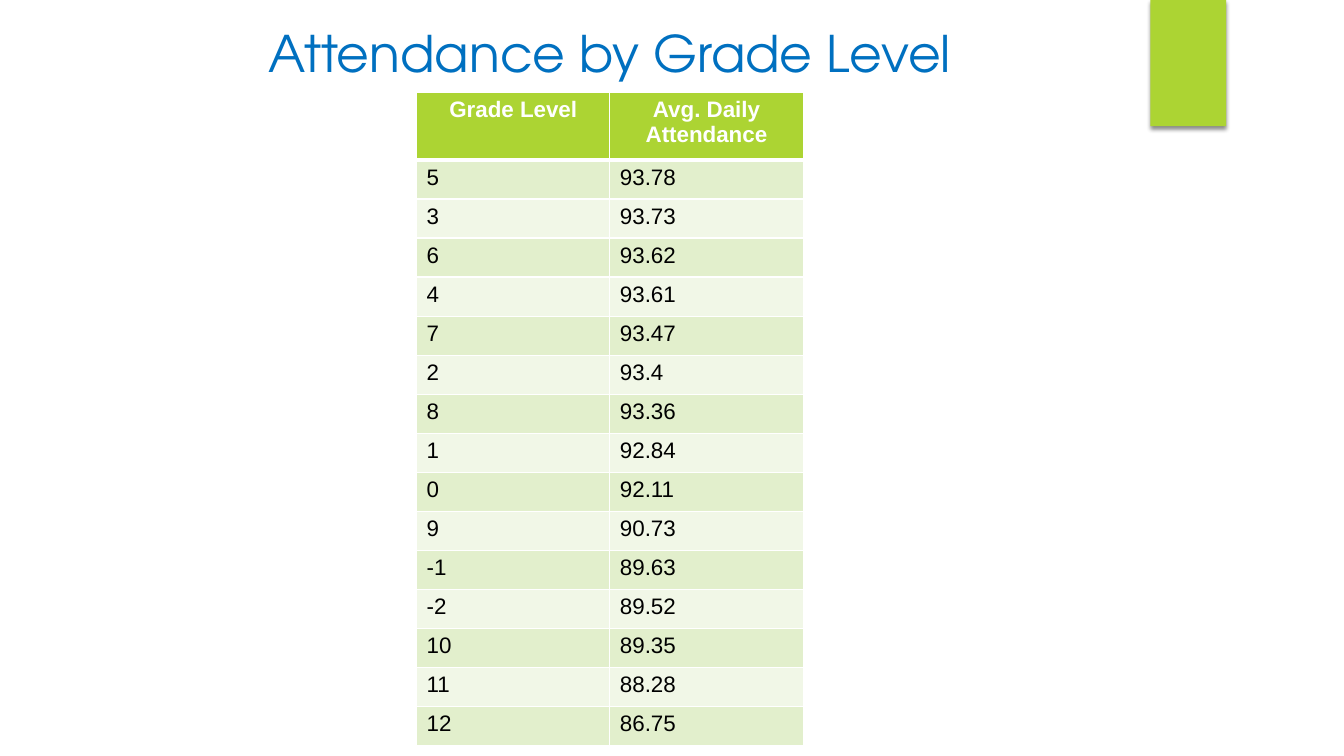
from dataclasses import dataclass

from lxml import etree
from pptx import Presentation
from pptx import util as u
from pptx.dml.color import RGBColor
from pptx.enum import shapes, text
from pptx.oxml import ns


@dataclass(frozen=True)
class Theme:
    lime: str = "ACD433"
    band: str = "E2EFCC"
    pale: str = "F1F7E7"
    blue: str = "0070C0"
    white: str = "FFFFFF"
    black: str = "000000"
    head: str = "TeX Gyre Adventor"
    body: str = "Arial"
    big: int = 36
    small: int = 16


THEME = Theme()
HEADS = ("Grade Level", "Avg. Daily Attendance")
RATES = (
    ("5", "93.78"), ("3", "93.73"), ("6", "93.62"), ("4", "93.61"),
    ("7", "93.47"), ("2", "93.4"), ("8", "93.36"), ("1", "92.84"),
    ("0", "92.11"), ("9", "90.73"), ("-1", "89.63"), ("-2", "89.52"),
    ("10", "89.35"), ("11", "88.28"), ("12", "86.75"),
)


def paint(fill, color):
    fill.solid()
    fill.fore_color.rgb = RGBColor.from_string(color)


def child(node, tag, **attrs):
    return etree.SubElement(node, ns.qn(tag), attrs)


def write(frame, words, face, size, color, bold=False, center=False):
    para = frame.paragraphs[0]
    para.alignment = text.PP_ALIGN.CENTER if center else text.PP_ALIGN.LEFT
    run = para.add_run()
    run.text = words
    run.font.name = face
    run.font.size = u.Pt(size)
    run.font.bold = bold
    run.font.color.rgb = RGBColor.from_string(color)


def add_tab(slide, box):
    tab = slide.shapes.add_shape(shapes.MSO_SHAPE.RECTANGLE, *map(u.Cm, box))
    paint(tab.fill, THEME.lime)
    tab.line.fill.background()
    tab.shadow.inherit = False
    glow = child(tab.shadow._element.find(ns.qn("a:effectLst")),
                 "a:outerShdw", blurRad=str(u.Pt(3)), dist=str(u.Pt(2)),
                 dir="5400000", rotWithShape="0")
    tint = child(glow, "a:srgbClr", val=THEME.black)
    child(tint, "a:alpha", val="45000")


def add_title(slide, box):
    frame = slide.shapes.add_textbox(*map(u.Cm, box)).text_frame
    frame.word_wrap = True
    frame.vertical_anchor = text.MSO_ANCHOR.MIDDLE
    write(frame, "Attendance by Grade Level", THEME.head, THEME.big,
          THEME.blue, center=True)


def edge(cell, base):
    props = cell._tc.get_or_add_tcPr()
    for spot, side in enumerate(("L", "R", "T", "B")):
        width = base if side == "B" else 1
        line = etree.Element(ns.qn(f"a:ln{side}"), w=str(u.Pt(width)))
        child(child(line, "a:solidFill"), "a:srgbClr", val=THEME.white)
        props.insert(spot, line)


def add_grid(slide, box, top):
    left, up, width, height = box
    rows = (HEADS, *RATES)
    grid = slide.shapes.add_table(
        len(rows), len(HEADS), *map(u.Cm, box)).table
    for col in grid.columns:
        col.width = u.Cm(width / len(HEADS))
    for i, row in enumerate(rows):
        first = i == 0
        grid.rows[i].height = u.Cm(
            top if first else (height - top) / len(RATES))
        shade = THEME.lime if first else (THEME.pale, THEME.band)[i % 2]
        for j, words in enumerate(row):
            cell = grid.cell(i, j)
            paint(cell.fill, shade)
            edge(cell, 3 if first else 1)
            write(cell.text_frame, words, THEME.body, THEME.small,
                  THEME.white if first else THEME.black, first, first)


def main():
    deck = Presentation()
    deck.slide_width = u.Cm(33.87)
    deck.slide_height = u.Cm(19.05)
    slide = deck.slides.add_slide(deck.slide_layouts[6])
    add_tab(slide, (28.99, 0, 1.91, 3.18))
    add_title(slide, (3.2, 0.33, 24.33, 1.96))
    add_grid(slide, (10.5, 2.32, 9.74, 16.48), 1.71)
    deck.save("out.pptx")


if __name__ == "__main__":
    main()
